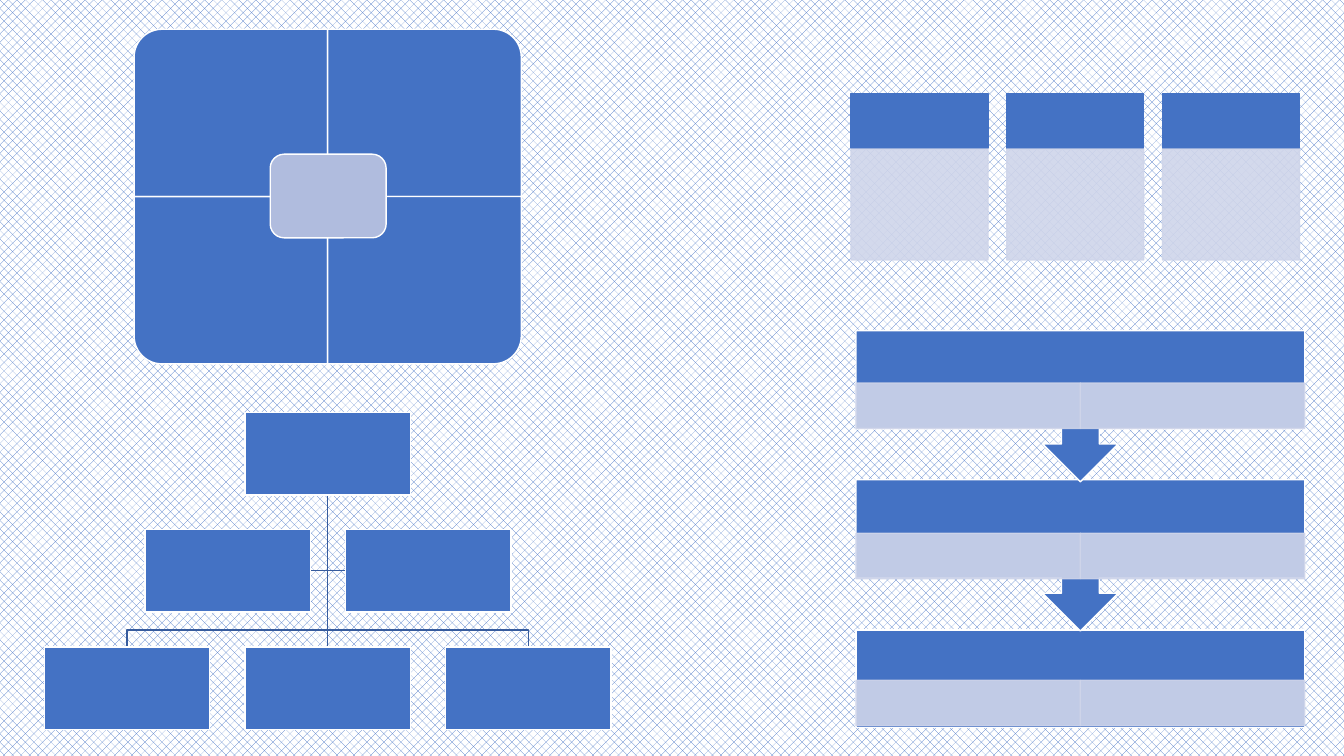
"""Build a slide of four blank diagrams: matrix, hierarchy, columns and process."""
import pptx
import pptx.util
import pptx.dml.color
import pptx.enum.dml
import pptx.enum.shapes
import pptx.oxml
import pptx.oxml.ns

Inches = pptx.util.Inches
RGBColor = pptx.dml.color.RGBColor
SHAPE = pptx.enum.shapes.MSO_SHAPE

BLUE = RGBColor(0x44, 0x72, 0xC4)
DARK_BLUE = RGBColor(0x36, 0x5B, 0x9D)
LAVENDER = RGBColor(0xB0, 0xBC, 0xDE)
TINT = RGBColor(0xCF, 0xD5, 0xEA)
WHITE = RGBColor(0xFF, 0xFF, 0xFF)

SOLID = {"fill": BLUE, "line": WHITE}
HEADER = {"fill": BLUE, "line": BLUE}
PALE = {"fill": TINT, "line": TINT, "alpha": 90}
HUB = {"fill": LAVENDER, "line": WHITE}

STEPS = [
    (SHAPE.RECTANGLE, 6.25, 0.97, 0, 6.75),
    (SHAPE.UP_ARROW_CALLOUT, 4.76, 1.5, 180, 5.29),
    (SHAPE.UP_ARROW_CALLOUT, 3.28, 1.5, 180, 3.8),
]
STEP_LEFT, STEP_W, STEP_CELL_H = 8.49, 4.45, 0.45

BOX_W, BOX_H = 1.64, 0.82
ROOT = (2.43, 4.09)
CHILDREN = [(0.44 + 1.99 * i, 6.42) for i in range(3)]
ASSISTANTS = [(1.44, 5.25), (3.43, 5.25)]
BRANCH_Y = 6.25

MATRIX_LEFT, MATRIX_TOP, TILE_W, TILE_H = 1.33, 0.29, 1.92, 1.66
TILES = [(0, 0, 270), (1, 0, 0), (0, 1, 180), (1, 1, 90)]

COLUMN_LEFT, COLUMN_RIGHT, COLUMN_W = 8.44, 12.89, 1.36


def add_box(grp, kind, left, top, width, height, look, rotation=0):
    shape = grp.shapes.add_shape(kind, *map(Inches, (left, top, width, height)))
    shape.rotation = rotation
    shape.shadow.inherit = False
    shape.fill.solid()
    shape.fill.fore_color.rgb = look["fill"]
    shape.line.color.rgb = look["line"]
    shape.line.width = pptx.util.Pt(1)
    if "alpha" in look:
        for color in shape._element.spPr.iter(pptx.oxml.ns.qn("a:srgbClr")):
            alpha = pptx.oxml.xmlchemy.OxmlElement("a:alpha")
            alpha.set("val", str(look["alpha"] * 1000))
            color.append(alpha)


def style_link(link):
    link.line.color.rgb = DARK_BLUE
    link.line.width = pptx.util.Pt(1)


def add_route(grp, points):
    start, *rest = [(Inches(x), Inches(y)) for x, y in points]
    builder = grp.shapes.build_freeform(*start)
    builder.add_line_segments(rest, close=False)
    route = builder.convert_to_shape()
    route.shadow.inherit = False
    route.fill.background()
    style_link(route)


def add_process(s):
    grp = s.shapes.add_group_shape()
    for kind, top, height, rotation, cell_top in STEPS:
        add_box(grp, kind, STEP_LEFT, top, STEP_W, height, SOLID, rotation)
        for i in range(2):
            left = STEP_LEFT + i * STEP_W / 2
            add_box(grp, SHAPE.RECTANGLE, left, cell_top, STEP_W / 2, STEP_CELL_H, PALE)


def add_hierarchy(s):
    grp = s.shapes.add_group_shape()
    trunk_x, trunk_y = ROOT[0] + BOX_W / 2, ROOT[1] + BOX_H
    for left, top in ASSISTANTS:
        edge = left if left > trunk_x else left + BOX_W
        middle = top + BOX_H / 2
        add_route(grp, [(trunk_x, trunk_y), (trunk_x, middle), (edge, middle)])
    for left, top in (CHILDREN[0], CHILDREN[2]):
        x = left + BOX_W / 2
        add_route(grp, [(trunk_x, trunk_y), (trunk_x, BRANCH_Y), (x, BRANCH_Y), (x, top)])
    trunk = grp.shapes.add_connector(
        pptx.enum.shapes.MSO_CONNECTOR.STRAIGHT,
        *map(Inches, (trunk_x, trunk_y, trunk_x, CHILDREN[1][1])))
    style_link(trunk)
    trunk._element.spPr.append(pptx.oxml.xmlchemy.OxmlElement("a:effectLst"))
    for left, top in [ROOT] + CHILDREN + ASSISTANTS:
        add_box(grp, SHAPE.RECTANGLE, left, top, BOX_W, BOX_H, SOLID)


def add_matrix(s):
    grp = s.shapes.add_group_shape()
    for col, row, rotation in TILES:
        width, height = (TILE_H, TILE_W) if rotation % 180 else (TILE_W, TILE_H)
        left = MATRIX_LEFT + (col + 0.5) * TILE_W - width / 2
        top = MATRIX_TOP + (row + 0.5) * TILE_H - height / 2
        add_box(grp, SHAPE.ROUND_1_RECTANGLE, left, top, width, height, SOLID, rotation)
    add_box(grp, SHAPE.ROUNDED_RECTANGLE, 2.68, 1.53, 1.15, 0.83, HUB)


def add_columns(s):
    grp = s.shapes.add_group_shape()
    pitch = (COLUMN_RIGHT - COLUMN_W - COLUMN_LEFT) / 2
    for i in range(3):
        left = COLUMN_LEFT + i * pitch
        add_box(grp, SHAPE.RECTANGLE, left, 0.93, COLUMN_W, 0.54, HEADER)
        add_box(grp, SHAPE.RECTANGLE, left, 1.48, COLUMN_W, 1.1, PALE)


def main():
    prs = pptx.Presentation()
    prs.slide_width, prs.slide_height = Inches(13.33), Inches(7.5)
    s = prs.slides.add_slide(prs.slide_layouts[6])
    fill = s.background.fill
    fill.patterned()
    fill.pattern = pptx.enum.dml.MSO_PATTERN.from_xml("pct40")
    fill.fore_color.rgb = BLUE
    fill.back_color.rgb = WHITE
    for add_diagram in (add_process, add_hierarchy, add_matrix, add_columns):
        add_diagram(s)
    prs.save("out.pptx")


if __name__ == "__main__":
    main()
